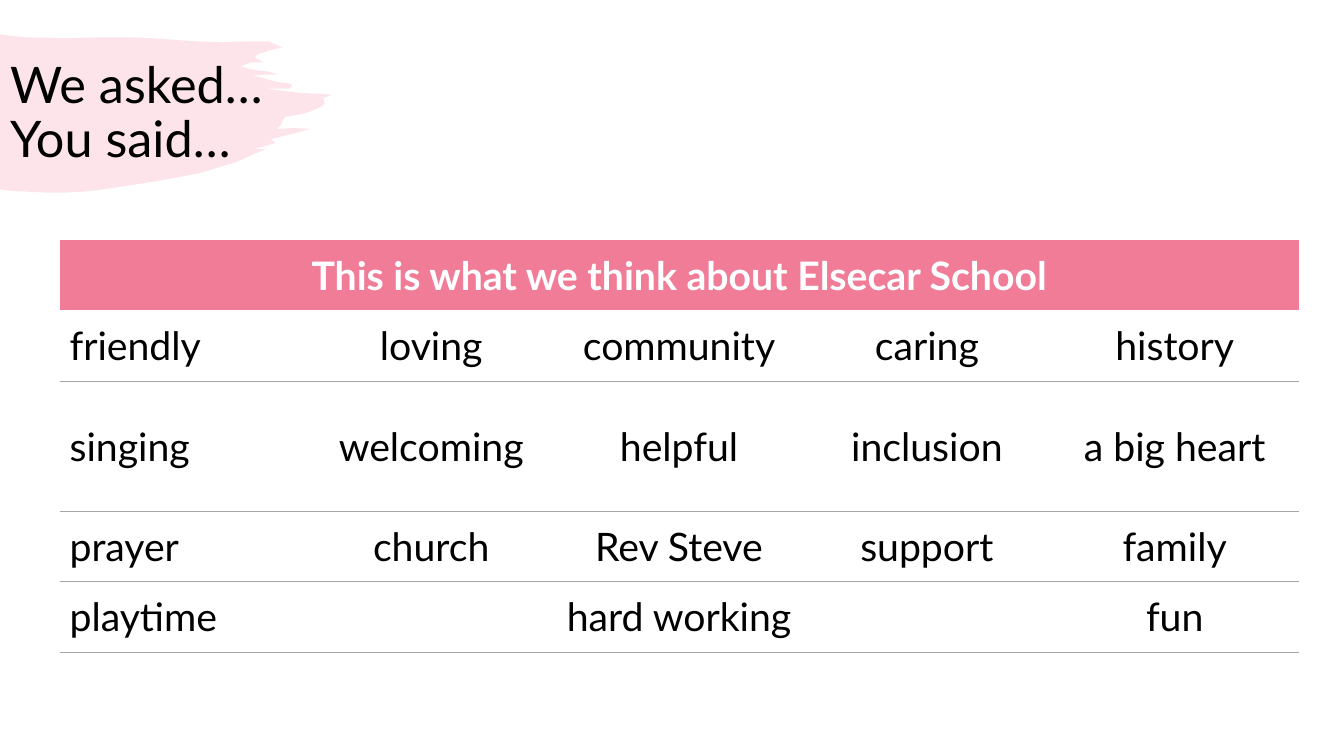
import pptx
import pptx.util
import pptx.dml.color
import pptx.enum.text
import pptx.oxml
import pptx.oxml.ns
from dataclasses import dataclass

Inches = pptx.util.Inches
Pt = pptx.util.Pt
RGB = pptx.dml.color.RGBColor.from_string
ALIGN = pptx.enum.text.PP_ALIGN
MIDDLE = pptx.enum.text.MSO_ANCHOR.MIDDLE


@dataclass(frozen=True)
class Theme:
    font: str = "Lato"
    pink: str = "F07C98"
    white: str = "FFFFFF"
    black: str = "000000"
    rule: str = "A6A6A6"
    title_size: int = 36
    table_size: int = 28
    rule_width: float = 0.25
    brush_alpha: int = 20


THEME = Theme()
NO_GRID_STYLE = "{2D5ABB26-0587-4C30-8999-92F81FD0307C}"

HEADING = "This is what we think about Elsecar School"
ANSWERS = [
    ["friendly", "loving", "community", "caring", "history"],
    ["singing", "welcoming", "helpful", "inclusion", "a big heart"],
    ["prayer", "church", "Rev Steve", "support", "family"],
    ["playtime", "hard working", "", "", "fun"],
]
ROW_HEIGHTS = [0.7, 0.7, 1.29, 0.7, 0.7]
TABLE_WIDTH = 12.29

# Outline of the brush stroke, clockwise from the top left
BRUSH_OUTLINE = [
    (0, 0.34), (0.06, 0.35), (0.25, 0.37), (0.66, 0.38), (1.02, 0.37),
    (1.27, 0.37), (1.51, 0.38), (1.94, 0.41), (2.21, 0.42), (2.48, 0.41),
    (2.66, 0.41), (2.8, 0.47), (2.71, 0.49), (2.55, 0.54), (2.53, 0.57),
    (2.56, 0.59), (2.62, 0.62), (2.49, 0.62), (2.38, 0.66), (2.46, 0.68),
    (2.56, 0.7), (2.66, 0.71), (2.75, 0.74), (2.63, 0.74), (2.51, 0.75),
    (2.63, 0.78), (2.73, 0.81), (2.8, 0.82), (2.88, 0.83), (2.9, 0.85),
    (2.87, 0.88), (2.84, 0.88), (2.63, 0.88), (2.96, 0.92), (3.3, 0.94),
    (3.21, 0.97), (3.22, 1.03), (3.18, 1.06), (3.07, 1.11), (3, 1.13),
    (2.83, 1.16), (2.8, 1.2), (2.78, 1.25), (2.74, 1.28), (2.91, 1.27),
    (3.08, 1.28), (2.89, 1.33), (2.69, 1.38), (2.73, 1.42), (2.52, 1.48),
    (2.63, 1.48), (2.34, 1.61), (1.97, 1.72), (1.54, 1.8), (1.02, 1.88),
    (0.84, 1.9), (0.65, 1.91), (0.44, 1.91), (0.23, 1.9), (0.07, 1.89),
    (0, 1.88),
]


def apply(target, values):
    for name, value in values.items():
        setattr(target, name, value)


def style_font(font, size, color, bold=False):
    apply(font, {"name": THEME.font, "size": Pt(size), "bold": bold})
    font.color.rgb = RGB(color)


def add_brush(slide):
    start, *rest = [(Inches(x), Inches(y)) for x, y in BRUSH_OUTLINE]
    builder = slide.shapes.build_freeform(*start)
    builder.add_line_segments(rest, close=True)
    brush = builder.convert_to_shape()
    brush.shadow.inherit = False
    brush.line.fill.background()
    brush.fill.solid()
    brush.fill.fore_color.rgb = RGB(THEME.pink)
    tint = brush.fill._xPr.find(".//" + pptx.oxml.ns.qn("a:srgbClr"))
    tint.append(pptx.oxml.parse_xml(
        f'<a:alpha {pptx.oxml.ns.nsdecls("a")} val="{THEME.brush_alpha * 1000}"/>'))
    # Send the brush stroke behind the title
    slide.shapes.title.element.addprevious(brush.element)


def fill_title(slide, text):
    title = slide.shapes.title
    apply(title, {"left": Inches(0), "top": Inches(0.41),
                  "width": Inches(3), "height": Inches(1.45)})
    frame = title.text_frame
    apply(frame, {"text": text, "vertical_anchor": MIDDLE, "word_wrap": True,
                  "auto_size": pptx.enum.text.MSO_AUTO_SIZE.NONE})
    line = frame.paragraphs[0]
    apply(line, {"alignment": ALIGN.LEFT, "line_spacing": 0.9})
    for run in line.runs:
        style_font(run.font, THEME.title_size, THEME.black)


def underline_cell(cell):
    border = pptx.oxml.parse_xml(
        f'<a:lnB {pptx.oxml.ns.nsdecls("a")} w="{Pt(THEME.rule_width)}">'
        f'<a:solidFill><a:srgbClr val="{THEME.rule}"/></a:solidFill></a:lnB>')
    cell._tc.get_or_add_tcPr().insert(0, border)


def fill_cell(cell, text, fill, color, align, space=0, bold=False):
    apply(cell, {"text": text, "vertical_anchor": MIDDLE,
                 "margin_top": Inches(0.03), "margin_bottom": Inches(0.03)})
    cell.fill.solid()
    cell.fill.fore_color.rgb = RGB(fill)
    line = cell.text_frame.paragraphs[0]
    apply(line, {"alignment": align, "space_before": Pt(space), "space_after": Pt(space)})
    style_font(line.font, THEME.table_size, color, bold)
    for run in line.runs:
        style_font(run.font, THEME.table_size, color, bold)


def add_answers(slide):
    columns = len(ANSWERS[0])
    frame = slide.shapes.add_table(
        len(ROW_HEIGHTS), columns, Inches(0.59), Inches(2.38),
        Inches(TABLE_WIDTH), Inches(sum(ROW_HEIGHTS)))
    table = frame.table
    apply(table, {"first_row": False, "horz_banding": False})
    table._tbl.tblPr.find(pptx.oxml.ns.qn("a:tableStyleId")).text = NO_GRID_STYLE
    for column in table.columns:
        column.width = Inches(TABLE_WIDTH / columns)
    for row, height in zip(table.rows, ROW_HEIGHTS):
        row.height = Inches(height)

    # Heading across all columns
    for c in range(columns):
        fill_cell(table.cell(0, c), "" if c else HEADING, THEME.pink,
                  THEME.white, ALIGN.CENTER, bold=True)
    table.cell(0, 0).merge(table.cell(0, columns - 1))

    # Answers, each row ruled off below
    for r, words in enumerate(ANSWERS, start=1):
        for c, word in enumerate(words):
            cell = table.cell(r, c)
            fill_cell(cell, word, THEME.white, THEME.black,
                      ALIGN.CENTER if c else ALIGN.LEFT, space=6)
            underline_cell(cell)
    table.cell(4, 1).merge(table.cell(4, 3))


def main():
    deck = pptx.Presentation()
    apply(deck, {"slide_width": Inches(13.33), "slide_height": Inches(7.5)})
    slide = deck.slides.add_slide(deck.slide_layouts[5])
    fill_title(slide, "We asked…\vYou said…")
    add_brush(slide)
    add_answers(slide)
    deck.save("out.pptx")


if __name__ == "__main__":
    main()
